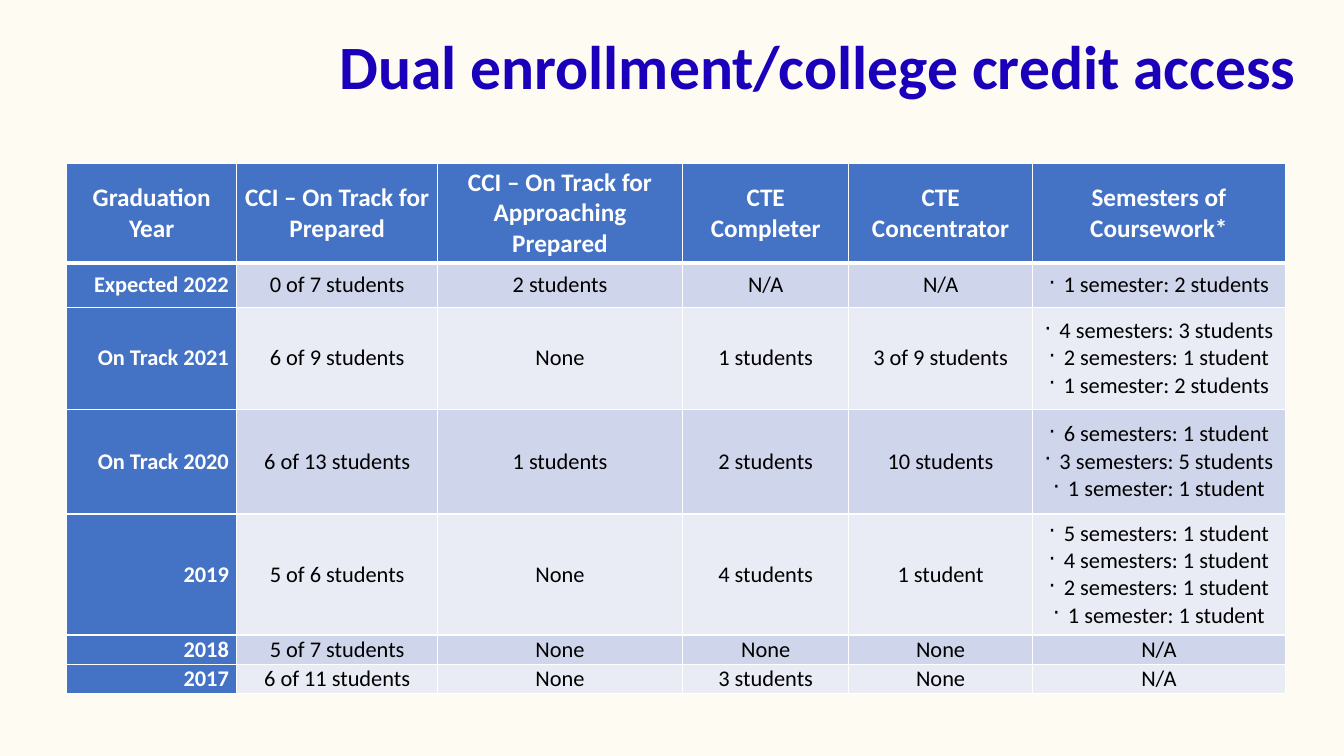
from lxml.etree import SubElement
from pptx import Presentation
from pptx.dml.color import RGBColor
from pptx.enum.text import MSO_ANCHOR as Anchor, MSO_AUTO_SIZE as AutoSize, PP_ALIGN as Align
from pptx.oxml.ns import qn
from pptx.util import Inches, Pt

COLORS = {
    "background": "FEFBF3",
    "title": "1A00BA",
    "header": "4472C4",
    "band_dark": "CFD5EA",
    "band_light": "E9EBF5",
    "white": "FFFFFF",
    "black": "000000",
}

HEADINGS = [
    "Graduation Year", "CCI – On Track for Prepared",
    "CCI – On Track for Approaching Prepared", "CTE Completer",
    "CTE Concentrator", "Semesters of Coursework*",
]
# A list in the last column becomes a bulleted cell
YEARS = [
    ["Expected 2022", "0 of 7 students", "2 students", "N/A", "N/A",
     ["1 semester: 2 students"]],
    ["On Track 2021", "6 of 9 students", "None", "1 students", "3 of 9 students",
     ["4 semesters: 3 students", "2 semesters: 1 student", "1 semester: 2 students"]],
    ["On Track 2020", "6 of 13 students", "1 students", "2 students", "10 students",
     ["6 semesters: 1 student", "3 semesters: 5 students", "1 semester: 1 student"]],
    ["2019", "5 of 6 students", "None", "4 students", "1 student",
     ["5 semesters: 1 student", "4 semesters: 1 student",
      "2 semesters: 1 student", "1 semester: 1 student"]],
    ["2018", "5 of 7 students", "None", "None", "None", "N/A"],
    ["2017", "6 of 11 students", "None", "3 students", "None", "N/A"],
]
COLUMN_WIDTHS = [1.69, 1.99, 2.43, 1.65, 1.82, 2.51]
ROW_HEIGHTS = [0.99, 0.44, 1.01, 1.04, 1.2, 0.29, 0.29]


def rgb(name):
    return RGBColor.from_string(COLORS[name])


def add_bullet(paragraph, indent=0.15):
    properties = paragraph._p.get_or_add_pPr()
    properties.set("marL", str(Inches(indent)))
    properties.set("indent", str(-Inches(indent)))
    SubElement(properties, qn("a:buChar"), char="·")


def write(frame, text, size=16, color="black", bold=False, align=Align.CENTER,
          font="Calibri"):
    """Fill a text frame; a list of lines is written as bullets."""
    bulleted = isinstance(text, list)
    for index, line in enumerate(text if bulleted else [text]):
        paragraph = frame.add_paragraph() if index else frame.paragraphs[0]
        paragraph.alignment = align
        if bulleted:
            add_bullet(paragraph)
        run = paragraph.add_run()
        run.text = line
        run.font.name = font
        run.font.size = Pt(size)
        run.font.bold = bold
        run.font.color.rgb = rgb(color)


class SlideBuilder:
    def __init__(self, presentation):
        self.slide = presentation.slides.add_slide(presentation.slide_layouts[6])
        fill = self.slide.background.fill
        fill.solid()
        fill.fore_color.rgb = rgb("background")

    def title(self, text, left, top, width, height):
        box = self.slide.shapes.add_textbox(
            Inches(left), Inches(top), Inches(width), Inches(height))
        box.text_frame.word_wrap = True
        box.text_frame.auto_size = AutoSize.SHAPE_TO_FIT_TEXT
        write(box.text_frame, text, size=44, color="title", bold=True)

    def borders(self, cell, bottom):
        properties = cell._tc.get_or_add_tcPr()
        for position, (side, points) in enumerate(
                [("L", 1), ("R", 1), ("T", 1), ("B", bottom)]):
            line = SubElement(properties, qn(f"a:ln{side}"), w=str(Pt(points)))
            properties.insert(position, line)
            solid = SubElement(line, qn("a:solidFill"))
            SubElement(solid, qn("a:srgbClr"), val=COLORS["white"])

    def cell(self, cell, text, fill, bottom=1, **text_format):
        cell.fill.solid()
        cell.fill.fore_color.rgb = rgb(fill)
        cell.vertical_anchor = Anchor.MIDDLE
        cell.margin_left = cell.margin_right = Inches(0.08)
        cell.margin_top = cell.margin_bottom = 0
        self.borders(cell, bottom)
        write(cell.text_frame, text, **text_format)

    def table(self, left, top, headings, rows, widths, heights):
        table = self.slide.shapes.add_table(
            len(heights), len(widths), Inches(left), Inches(top),
            Inches(sum(widths)), Inches(sum(heights))).table
        for column, width in zip(table.columns, widths):
            column.width = Inches(width)
        for row, height in zip(table.rows, heights):
            row.height = Inches(height)

        # Header row
        for column, heading in enumerate(headings):
            self.cell(table.cell(0, column), heading, "header", bottom=3,
                      size=18, color="white", bold=True)

        # Year column and banded body
        for row, (year, *entries) in enumerate(rows, 1):
            self.cell(table.cell(row, 0), year, "header",
                      color="white", bold=True, align=Align.RIGHT)
            band = "band_dark" if row % 2 else "band_light"
            for column, entry in enumerate(entries, 1):
                self.cell(table.cell(row, column), entry, band)


def main():
    presentation = Presentation()
    presentation.slide_width = Inches(13.33)
    presentation.slide_height = Inches(7.5)
    builder = SlideBuilder(presentation)
    builder.table(0.66, 1.62, HEADINGS, YEARS, COLUMN_WIDTHS, ROW_HEIGHTS)
    builder.title("Dual enrollment/college credit access", 3.26, 0.23, 9.71, 0.84)
    presentation.save("out.pptx")


if __name__ == "__main__":
    main()
